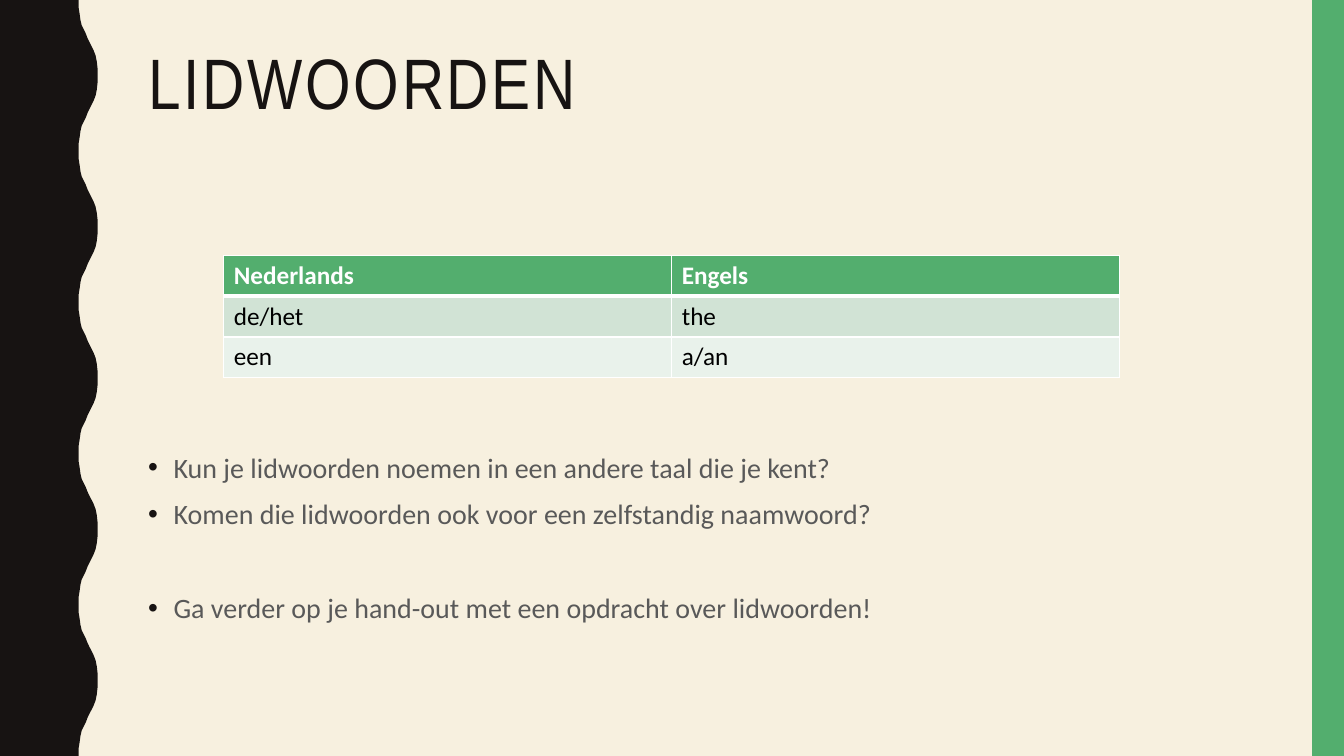
import pptx
import pptx.dml.color
import pptx.enum.shapes
import pptx.enum.text
import pptx.oxml
import pptx.oxml.ns
import pptx.util

Cm = pptx.util.Cm
Pt = pptx.util.Pt

COLOURS = {
    "cream": "F7F0DF",
    "black": "171312",
    "green": "53AE6E",
    "grey": "595959",
    "white": "FFFFFF",
    "text": "000000",
    "band_dark": "D1E3D5",
    "band_light": "E9F2EB",
}
WIDTH, HEIGHT = 33.87, 19.05

# Outline of half a wave, from trough to crest, as (x, y) in cm.
WAVE_PERIOD = 3.81
HALF_WAVE = [
    (1.98, 0), (1.98, 0.18), (2.01, 0.36), (2.03, 0.51), (2.06, 0.64),
    (2.11, 0.74), (2.16, 0.84), (2.21, 0.97), (2.26, 1.07), (2.31, 1.17),
    (2.36, 1.27), (2.41, 1.4), (2.44, 1.55), (2.46, 1.73), (2.46, 1.9),
]

ARTICLES = [("Nederlands", "Engels"), ("de/het", "the"), ("een", "a/an")]
# Each question with its space before, in points.
QUESTIONS = [
    ("Kun je lidwoorden noemen in een andere taal die je kent?", 7),
    ("Komen die lidwoorden ook voor een zelfstandig naamwoord?", 7),
    ("Ga verder op je hand-out met een opdracht over lidwoorden!", 40.8),
]


def rgb(name):
    return pptx.dml.color.RGBColor.from_string(COLOURS[name])


def paint(shape, colour):
    shape.fill.solid()
    shape.fill.fore_color.rgb = rgb(colour)
    shape.line.fill.background()
    shape.shadow.inherit = False


def write(para, text, *, size, colour, font="Calibri", bold=False,
          tracking=0, line_spacing=None, before=0):
    para.alignment = pptx.enum.text.PP_ALIGN.LEFT
    para.line_spacing = line_spacing
    para.space_before = Pt(before)
    span = para.add_run()
    span.text = text
    span.font.size = Pt(size)
    span.font.name = font
    span.font.bold = bold
    span.font.color.rgb = rgb(colour)
    if tracking:
        span.font._element.set("spc", str(tracking * 100))


def add_bullet(para, colour):
    properties = para._p.get_or_add_pPr()
    properties.set("marL", str(Cm(0.64)))
    properties.set("indent", str(-Cm(0.64)))
    namespace = pptx.oxml.ns.nsdecls("a")
    for xml in (
        f'<a:buClr {namespace}><a:srgbClr val="{COLOURS[colour]}"/></a:buClr>',
        f'<a:buFont {namespace} typeface="Arial"/>',
        f'<a:buChar {namespace} char="•"/>',
    ):
        properties.append(pptx.oxml.parse_xml(xml))


def add_border(cell, side, points):
    cell._tc.get_or_add_tcPr().append(pptx.oxml.parse_xml(
        f'<a:ln{side} {pptx.oxml.ns.nsdecls("a")} w="{Pt(points)}"><a:solidFill>'
        f'<a:srgbClr val="{COLOURS["white"]}"/></a:solidFill></a:ln{side}>'))


def place_text(placeholder, left, top, width, height):
    """Move a placeholder to the box and return its text frame."""
    placeholder.left, placeholder.top = Cm(left), Cm(top)
    placeholder.width, placeholder.height = Cm(width), Cm(height)
    frame = placeholder.text_frame
    frame.word_wrap = True
    frame.auto_size = pptx.enum.text.MSO_AUTO_SIZE.NONE
    frame.vertical_anchor = pptx.enum.text.MSO_ANCHOR.TOP
    return frame


def add_wavy_edge(page, left, top, height):
    wave = HALF_WAVE + [(x, WAVE_PERIOD - y) for x, y in HALF_WAVE[-2::-1]]
    points = [
        (Cm(left + x), Cm(top + number * WAVE_PERIOD + y))
        for number in range(round(height / WAVE_PERIOD))
        for x, y in wave
    ]
    builder = page.shapes.build_freeform(Cm(left), Cm(top))
    builder.add_line_segments(points + [(Cm(left), Cm(top + height))])
    paint(builder.convert_to_shape(), "black")


def add_side_band(page, left, top, width, height):
    band = page.shapes.add_shape(
        pptx.enum.shapes.MSO_SHAPE.RECTANGLE,
        Cm(left), Cm(top), Cm(width), Cm(height))
    paint(band, "green")


def add_title(page, *box):
    frame = place_text(page.shapes.title, *box)
    write(frame.paragraphs[0], "LIDWOORDEN", size=51, colour="black",
          font="Arial Narrow", tracking=2, line_spacing=0.9)


def add_questions(page, *box):
    frame = place_text(page.placeholders[1], *box)
    for index, (question, before) in enumerate(QUESTIONS):
        para = frame.add_paragraph() if index else frame.paragraphs[0]
        write(para, question, size=20, colour="grey",
              line_spacing=1.1, before=before)
        add_bullet(para, "black")


def add_article_table(page, left, top, width, height):
    table = page.shapes.add_table(
        len(ARTICLES), len(ARTICLES[0]),
        Cm(left), Cm(top), Cm(width), Cm(height)).table
    fills = ["green", "band_dark", "band_light"]
    for row, words in enumerate(ARTICLES):
        header = row == 0
        for column, word in enumerate(words):
            cell = table.cell(row, column)
            write(cell.text_frame.paragraphs[0], word, size=18, bold=header,
                  colour="white" if header else "text")
            add_border(cell, "L", 1)
            add_border(cell, "R", 1)
            add_border(cell, "T", 3 if row == 1 else 1)
            add_border(cell, "B", 3 if header else 1)
            cell.fill.solid()
            cell.fill.fore_color.rgb = rgb(fills[row])


def add_articles_page(deck):
    page = deck.slides.add_slide(deck.slide_layouts[1])
    page.background.fill.solid()
    page.background.fill.fore_color.rgb = rgb("cream")
    add_wavy_edge(page, 0, 0, HEIGHT)
    add_side_band(page, WIDTH - 0.8, 0, 0.8, HEIGHT)
    add_title(page, 3.48, 1.07, 28.27, 4.14)
    add_questions(page, 3.48, 11.13, 28.27, 5.2)
    add_article_table(page, 5.64, 6.43, 22.58, 3.09)


def main():
    deck = pptx.Presentation()
    deck.slide_width, deck.slide_height = Cm(WIDTH), Cm(HEIGHT)
    add_articles_page(deck)
    deck.save("out.pptx")


if __name__ == "__main__":
    main()
